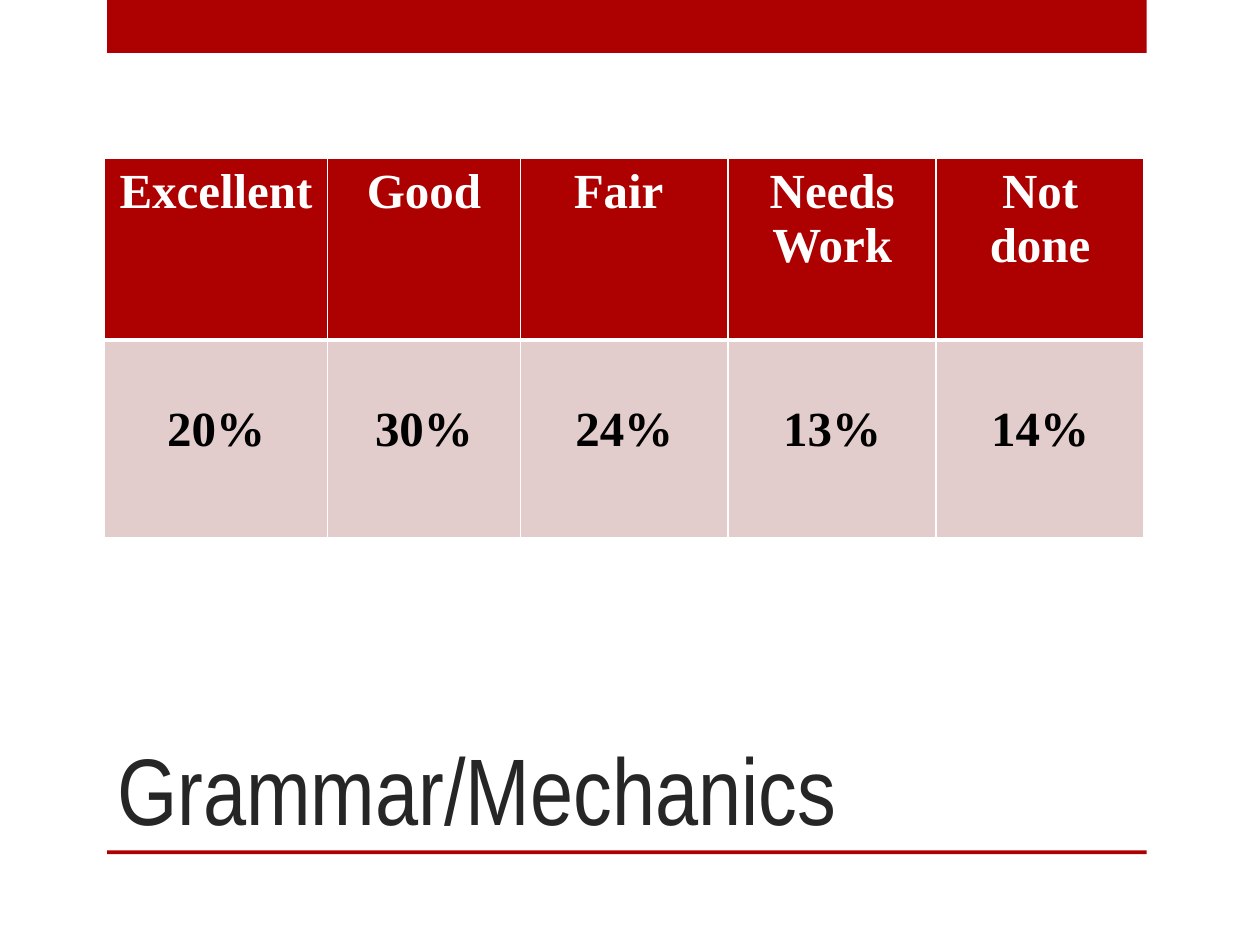
from dataclasses import dataclass

from lxml import etree
from pptx import Presentation
from pptx.dml.color import RGBColor
from pptx.enum.shapes import MSO_SHAPE
from pptx.enum.text import MSO_ANCHOR, MSO_AUTO_SIZE, PP_ALIGN
from pptx.oxml.ns import qn
from pptx.util import Inches, Pt

RECTANGLE = MSO_SHAPE.RECTANGLE
LEFT, CENTER = PP_ALIGN.LEFT, PP_ALIGN.CENTER
TOP, BOTTOM = MSO_ANCHOR.TOP, MSO_ANCHOR.BOTTOM
NO_AUTOFIT = MSO_AUTO_SIZE.NONE

TITLE = "Grammar/Mechanics"
RATINGS = [
    ("Excellent", "20%"),
    ("Good", "30%"),
    ("Fair ", "24%"),
    ("Needs Work", "13%"),
    ("Not done", "14%"),
]


@dataclass(frozen=True)
class Theme:
    accent: str = "AD0101"
    tint: str = "E3CCCC"
    white: str = "FFFFFF"
    black: str = "000000"
    ink: str = "262626"
    title_font: str = "Arial Narrow"
    table_font: str = "Times New Roman"
    title_size: int = 54
    table_size: int = 28


THEME = Theme()
SLIDE_WIDTH, SLIDE_HEIGHT = 10, 7.5
BAND_LEFT, CONTENT_LEFT, CONTENT_WIDTH = 0.85, 0.83, 8.25
RULE_TOP = 0.9 * SLIDE_HEIGHT
BANDS = [(0, 0.42), (RULE_TOP, 0.03)]
TITLE_WIDTH, TITLE_HEIGHT = 0.9 * CONTENT_WIDTH, 1.75
TABLE_TOP = 1.26
COLUMN_WIDTHS = [1.77, 1.53, 1.65, 1.65, 1.65]
ROWS = [
    dict(height=1.44, fill=THEME.accent, color=THEME.white, margin=0.05, top=1, bottom=3),
    dict(height=1.57, fill=THEME.tint, color=THEME.black, margin=0.5, top=3, bottom=1),
]


def paint(target, color):
    target.fill.solid()
    target.fill.fore_color.rgb = RGBColor.from_string(color)


def write(frame, text, font, size, color, bold=False, align=LEFT):
    para = frame.paragraphs[0]
    para.alignment = align
    span = para.add_run()
    span.text = text
    span.font.name = font
    span.font.size = Pt(size)
    span.font.bold = bold
    span.font.color.rgb = RGBColor.from_string(color)


def add_borders(cell, top, bottom):
    properties = cell._tc.get_or_add_tcPr()
    for side, width in (("L", 1), ("R", 1), ("T", top), ("B", bottom)):
        line = etree.SubElement(properties, qn(f"a:ln{side}"), w=str(Pt(width)))
        fill = etree.SubElement(line, qn("a:solidFill"))
        etree.SubElement(fill, qn("a:srgbClr"), val=THEME.white)


def add_band(page, top, height):
    band = page.shapes.add_shape(
        RECTANGLE, Inches(BAND_LEFT), Inches(top), Inches(CONTENT_WIDTH), Inches(height))
    band.shadow.inherit = False
    band.line.fill.background()
    paint(band, THEME.accent)


def format_title(page):
    title = page.shapes.title
    title.left, title.top = Inches(CONTENT_LEFT), Inches(RULE_TOP - TITLE_HEIGHT)
    title.width, title.height = Inches(TITLE_WIDTH), Inches(TITLE_HEIGHT)
    frame = title.text_frame
    frame.auto_size = NO_AUTOFIT
    frame.vertical_anchor = BOTTOM
    write(frame, TITLE, THEME.title_font, THEME.title_size, THEME.ink)


def add_ratings(page):
    height = sum(row["height"] for row in ROWS)
    table = page.shapes.add_table(
        len(ROWS), len(RATINGS), Inches(CONTENT_LEFT), Inches(TABLE_TOP),
        Inches(CONTENT_WIDTH), Inches(height)).table
    for column, width in zip(table.columns, COLUMN_WIDTHS):
        column.width = Inches(width)
    for row_index, (row, texts) in enumerate(zip(ROWS, zip(*RATINGS))):
        table.rows[row_index].height = Inches(row["height"])
        for column_index, text in enumerate(texts):
            cell = table.cell(row_index, column_index)
            add_borders(cell, row["top"], row["bottom"])
            paint(cell, row["fill"])
            cell.vertical_anchor = TOP
            cell.margin_top = Inches(row["margin"])
            write(cell.text_frame, text, THEME.table_font, THEME.table_size,
                  row["color"], bold=True, align=CENTER)


def main():
    deck = Presentation()
    deck.slide_width, deck.slide_height = Inches(SLIDE_WIDTH), Inches(SLIDE_HEIGHT)
    page = deck.slides.add_slide(deck.slide_layouts.get_by_name("Title Only"))
    for top, height in BANDS:
        add_band(page, top, height)
    format_title(page)
    add_ratings(page)
    deck.save("out.pptx")


if __name__ == "__main__":
    main()
